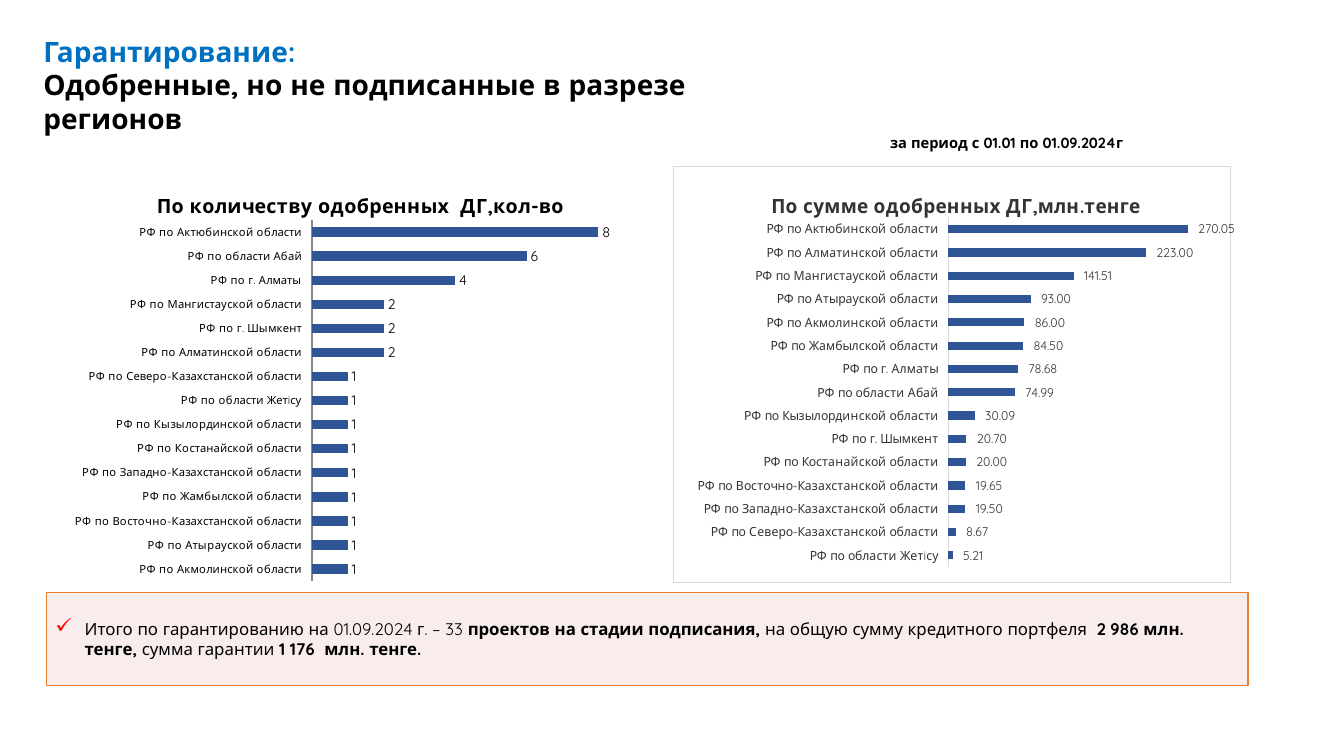
from lxml import etree
from pptx import Presentation
from pptx.chart.data import CategoryChartData
from pptx.dml.color import RGBColor
from pptx.enum.chart import XL_CHART_TYPE, XL_LABEL_POSITION, XL_TICK_LABEL_POSITION, XL_TICK_MARK
from pptx.enum.shapes import MSO_SHAPE
from pptx.enum.text import MSO_ANCHOR, PP_ALIGN
from pptx.oxml import parse_xml
from pptx.oxml.ns import nsdecls, qn
from pptx.util import Inches, Pt

BAR = XL_CHART_TYPE.BAR_CLUSTERED
OUTSIDE = XL_LABEL_POSITION.OUTSIDE_END
LOW = XL_TICK_LABEL_POSITION.LOW
NO_TICK = XL_TICK_MARK.NONE
RECTANGLE = MSO_SHAPE.RECTANGLE
TOP, MIDDLE = MSO_ANCHOR.TOP, MSO_ANCHOR.MIDDLE
LEFT = PP_ALIGN.LEFT
FONT = "Quicksand"
BLACK, DARK, BLUE, NAVY, ORANGE = "000000", "333333", "0070C0", "2F5597", "ED7D31"
SUM_FORMAT = "_-* #\\ ##0.00_р_._-;\\-* #\\ ##0.00_р_._-;"

COUNTS = [
    ("Акмолинской области", 1), ("Атырауской области", 1),
    ("Восточно-Казахстанской области", 1), ("Жамбылской области", 1),
    ("Западно-Казахстанской области", 1), ("Костанайской области", 1),
    ("Кызылординской области", 1), ("области Жетiсу", 1),
    ("Северо-Казахстанской области", 1), ("Алматинской области", 2),
    ("г. Шымкент", 2), ("Мангистауской области", 2), ("г. Алматы", 4),
    ("области Абай", 6), ("Актюбинской области", 8),
]
SUMS = [
    ("области Жетiсу", 5.21), ("Северо-Казахстанской области", 8.67),
    ("Западно-Казахстанской области", 19.5), ("Восточно-Казахстанской области", 19.65),
    ("Костанайской области", 20), ("г. Шымкент", 20.7),
    ("Кызылординской области", 30.09), ("области Абай", 74.99), ("г. Алматы", 78.68),
    ("Жамбылской области", 84.5), ("Акмолинской области", 86),
    ("Атырауской области", 93), ("Мангистауской области", 141.51),
    ("Алматинской области", 223), ("Актюбинской области", 270.05),
]
SUMMARY = [
    ("Итого по гарантированию на 01.09.2024 г. – 33 ", False),
    ("проектов на стадии подписания, ", True),
    ("на общую сумму кредитного портфеля  ", False),
    ("2 986 млн. тенге, ", True),
    ("сумма гарантии", False),
    (" 1 176  млн. тенге.", True),
]


def color(value):
    """Turn a hex string into a colour."""
    return RGBColor.from_string(value)


def style_font(font, size, shade=BLACK, bold=False):
    """Set typeface, size, colour and weight."""
    font.name, font.size, font.bold = FONT, Pt(size), bold
    font.color.rgb = color(shade)


def add_span(para, text, size, shade=BLACK, bold=False):
    """Append formatted text to a paragraph."""
    span = para.add_run()
    span.text = text
    style_font(span.font, size, shade, bold)


def add_heading(page):
    """Place the two-part slide title."""
    title = page.shapes.title
    title.left, title.top = Inches(0.33), Inches(0.29)
    title.width, title.height = Inches(7.87), Inches(1.11)
    frame = title.text_frame
    frame.word_wrap, frame.vertical_anchor = True, TOP
    para = frame.paragraphs[0]
    para.alignment, para.line_spacing = LEFT, 1.0
    add_span(para, "Гарантирование: ", 20, BLUE, True)
    para.add_line_break()
    add_span(para, "Одобренные, но не подписанные в разрезе регионов", 20, BLACK, True)


def add_period(page):
    """Place the reporting period."""
    box = page.shapes.add_textbox(Inches(8.73), Inches(1.28), Inches(2.58), Inches(0.28))
    box.text_frame.word_wrap = False
    add_span(box.text_frame.paragraphs[0], "за период с 01.01 по 01.09.2024г", 10.5, bold=True)


def add_summary(page):
    """Place the tinted panel with the totals."""
    panel = page.shapes.add_shape(RECTANGLE, Inches(0.46), Inches(5.88), Inches(11.92), Inches(0.92))
    panel.shadow.inherit = False
    panel.fill.solid()
    panel.fill.fore_color.rgb = color("F2DCDB")
    tint = panel.fill._xPr.find(".//" + qn("a:srgbClr"))
    etree.SubElement(tint, qn("a:alpha")).set("val", "50000")
    panel.line.color.rgb = color(ORANGE)
    panel.line.width = Pt(1)
    frame = panel.text_frame
    frame.word_wrap, frame.vertical_anchor = True, MIDDLE
    frame.margin_left = frame.margin_right = Inches(0.08)
    frame.margin_top = frame.margin_bottom = Inches(0.04)
    para = frame.paragraphs[0]
    para.alignment, para.space_after = LEFT, Pt(6)
    props = para._p.get_or_add_pPr()
    props.set("marL", str(Inches(0.3)))
    props.set("indent", str(Inches(-0.29)))
    space = nsdecls("a")
    for bullet in (
        f'<a:buClr {space}><a:srgbClr val="FF0000"/></a:buClr>',
        f'<a:buSzPct {space} val="125000"/>',
        f'<a:buChar {space} char="✓"/>',
    ):
        props.append(parse_xml(bullet))
    for text, bold in SUMMARY:
        add_span(para, text, 12, bold=bold)


def manual_layout(x, y, width=None, height=None):
    """Build a fractional layout, of the inner plot when a size is given."""
    layout = parse_xml(f"<c:layout {nsdecls('c')}><c:manualLayout/></c:layout>")
    parts = [("xMode", "edge"), ("yMode", "edge"), ("x", x), ("y", y)]
    if width:
        parts = [("layoutTarget", "inner")] + parts + [("w", width), ("h", height)]
    for name, value in parts:
        etree.SubElement(layout[0], qn("c:" + name)).set("val", str(value))
    return layout


def replace_layout(parent, layout, position):
    """Swap the layout of a chart part."""
    for old in parent.findall(qn("c:layout")):
        parent.remove(old)
    parent.insert(position, layout)


def add_region_chart(page, place, title, rows, plot_area, title_at, top_value, gap,
                     size, label_size, shade, axis_shade, number_format="General"):
    """Add a bar chart of regions and return its chart."""
    data = CategoryChartData(number_format=number_format)
    data.categories = [f"РФ по {region}" for region, _ in rows]
    data.add_series("Series 1", [value for _, value in rows])
    chart = page.shapes.add_chart(BAR, *[Inches(length) for length in place], data).chart
    chart.font.name, chart.font.size = "Calibri", Pt(10)
    chart.has_legend = False
    chart.has_title = True
    add_span(chart.chart_title.text_frame.paragraphs[0], title, 14, shade, True)
    chart.chart_title.include_in_layout = False
    replace_layout(chart.chart_title._element, manual_layout(*title_at), 1)
    replace_layout(chart._chartSpace.chart.plotArea, manual_layout(*plot_area), 0)

    regions, values = chart.category_axis, chart.value_axis
    regions.major_tick_mark = regions.minor_tick_mark = NO_TICK
    regions.tick_label_position = LOW
    style_font(regions.tick_labels.font, size, shade)
    regions.format.line.color.rgb = color(axis_shade)
    regions.format.line.width = Pt(0.75)
    values.visible = values.has_major_gridlines = False
    values.minimum_scale, values.maximum_scale = 0, top_value

    plot = chart.plots[0]
    plot.gap_width, plot.vary_by_categories = gap, False
    bars = plot.series[0].format.fill
    bars.solid()
    bars.fore_color.rgb = color(NAVY)
    plot.has_data_labels = True
    labels = plot.data_labels
    labels.show_value, labels.position = True, OUTSIDE
    labels.number_format, labels.number_format_is_linked = number_format, False
    style_font(labels.font, label_size, shade)
    return chart


def frame_chart(chart):
    """Give a chart a white ground and a thin border."""
    border = parse_xml(
        f'<c:spPr {nsdecls("c", "a")}><a:solidFill><a:srgbClr val="FFFFFF"/></a:solidFill>'
        '<a:ln w="9525"><a:solidFill><a:srgbClr val="D9D9D9"/></a:solidFill></a:ln></c:spPr>')
    chart._chartSpace.chart.addnext(border)


def main():
    """Build the slide and save it."""
    deck = Presentation()
    deck.slide_width, deck.slide_height = Inches(13.33), Inches(7.5)
    page = deck.slides.add_slide(deck.slide_layouts[5])
    add_heading(page)
    add_period(page)
    add_summary(page)
    add_region_chart(
        page, (0.57, 1.65, 5.94, 4.22), "По количеству одобренных  ДГ,кол-во", COUNTS,
        (0.425, 0.127, 0.538, 0.848), (0.16, 0.05), 9, 150, 8, 10, BLACK, "868686")
    sums = add_region_chart(
        page, (6.67, 1.65, 5.71, 4.13), "По сумме одобренных ДГ,млн.тенге", SUMS,
        (0.493, 0.122, 0.477, 0.842), (0.17, 0.05), 300, 182, 9, 9, DARK, "D9D9D9", SUM_FORMAT)
    frame_chart(sums)
    deck.save("out.pptx")


if __name__ == "__main__":
    main()
